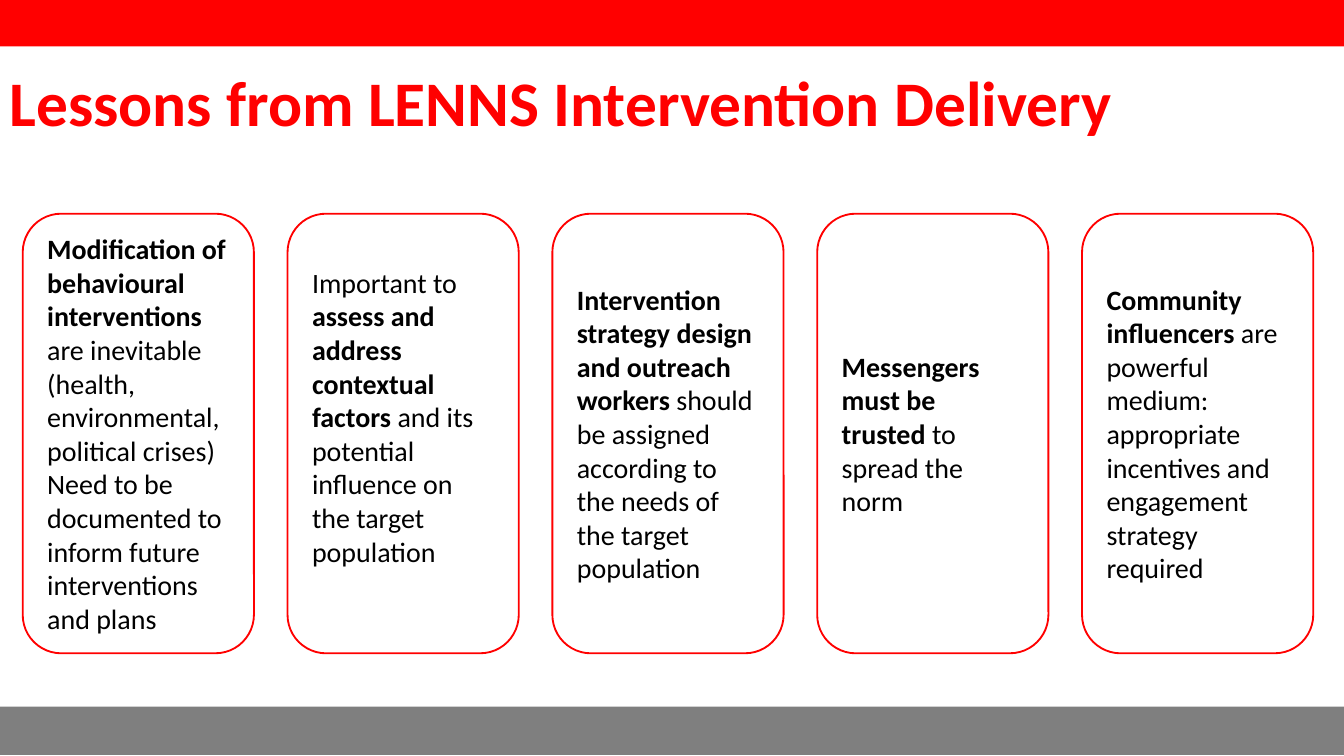
from dataclasses import dataclass

from pptx import Presentation
from pptx.dml.color import RGBColor
from pptx.enum.shapes import MSO_SHAPE as Preset
from pptx.enum.text import MSO_ANCHOR as Anchor, PP_ALIGN as Align
from pptx.util import Cm, Pt


@dataclass(frozen=True)
class Theme:
    font: str = "Calibri"
    accent: RGBColor = RGBColor(0xFF, 0x00, 0x00)
    footer: RGBColor = RGBColor(0x7F, 0x7F, 0x7F)
    paper: RGBColor = RGBColor(0xFF, 0xFF, 0xFF)
    ink: RGBColor = RGBColor(0x00, 0x00, 0x00)
    title_size: Pt = Pt(34)
    body_size: Pt = Pt(15)
    outline: Pt = Pt(1)


THEME = Theme()
HEADLINE = "Lessons from LENNS Intervention Delivery"

# Each lesson: runs of (text, bold), then the bottom inset that sets its height in the card.
CENTRED, RAISED = Cm(0.13), Cm(0.77)
LESSONS = [
    ([("Modification of behavioural interventions ", True),
      ("are inevitable (health, environmental, political crises) Need to be "
       "documented to inform future interventions and plans", False)], CENTRED),
    ([("Important to ", False),
      ("assess and address contextual factors", True),
      (" and its potential influence on the target population", False)], RAISED),
    ([("Intervention strategy design and outreach workers ", True),
      ("should be assigned according to the needs of the target population", False)], CENTRED),
    ([("Messengers must be trusted ", True),
      ("to spread the norm", False)], CENTRED),
    ([("Community influencers ", True),
      ("are powerful medium: appropriate incentives and engagement strategy required",
       False)], CENTRED),
]


def style(paragraph, size, color):
    paragraph.alignment = Align.LEFT
    paragraph.font.name = THEME.font
    paragraph.font.size = size
    paragraph.font.color.rgb = color


def add_band(slide, box, color):
    band = slide.shapes.add_shape(Preset.RECTANGLE, *box)
    band.shadow.inherit = False
    band.fill.solid()
    band.fill.fore_color.rgb = color
    band.line.fill.background()


def place_title(slide, box):
    title = slide.shapes.title
    title.left, title.top, title.width, title.height = box
    frame = title.text_frame
    frame.margin_left = frame.margin_right = Cm(0.18)
    frame.margin_top = frame.margin_bottom = Cm(0.1)
    frame.vertical_anchor = Anchor.TOP
    frame.text = HEADLINE
    headline = frame.paragraphs[0]
    style(headline, THEME.title_size, THEME.accent)
    headline.font.bold = True


def add_card(slide, box, lesson, bottom_inset):
    card = slide.shapes.add_shape(Preset.ROUNDED_RECTANGLE, *box)
    card.shadow.inherit = False
    card.fill.solid()
    card.fill.fore_color.rgb = THEME.paper
    card.line.color.rgb = THEME.accent
    card.line.width = THEME.outline
    frame = card.text_frame
    frame.word_wrap = True
    frame.vertical_anchor = Anchor.MIDDLE
    frame.margin_bottom = bottom_inset
    paragraph = frame.paragraphs[0]
    style(paragraph, THEME.body_size, THEME.ink)
    for text, bold in lesson:
        run = paragraph.add_run()
        run.text = text
        run.font.bold = bold


def add_cards(slide, box):
    left, top, width, height = box
    card_width = Cm(4.37)
    pitch = (width - card_width) // (len(LESSONS) - 1)
    for column, (lesson, bottom_inset) in enumerate(LESSONS):
        add_card(slide, (left + column * pitch, top, card_width, height),
                 lesson, bottom_inset)


def main():
    deck = Presentation()
    deck.slide_width, deck.slide_height = Cm(25.4), Cm(14.29)
    slide = deck.slides.add_slide(deck.slide_layouts[5])
    add_band(slide, (Cm(-0.05), Cm(-0.03), Cm(25.5), Cm(0.91)), THEME.accent)
    add_band(slide, (Cm(-0.05), Cm(13.36), Cm(25.45), Cm(0.91)), THEME.footer)
    place_title(slide, (Cm(0), Cm(1.09), Cm(25.27), Cm(1.93)))
    add_cards(slide, (Cm(0.43), Cm(4.04), Cm(24.39), Cm(8.31)))
    deck.save("out.pptx")


if __name__ == "__main__":
    main()
